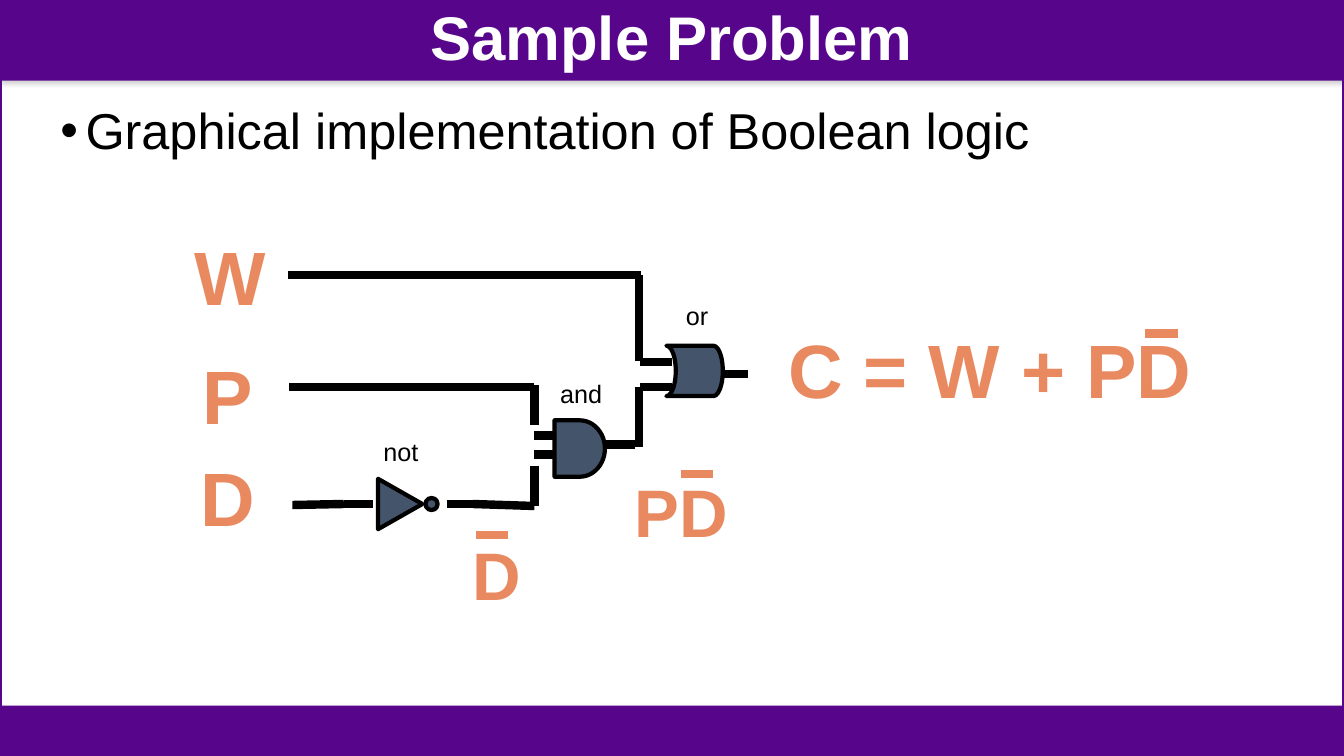
from dataclasses import dataclass
from typing import NamedTuple

from lxml import etree
from pptx import Presentation
from pptx.dml.color import RGBColor
from pptx.enum.shapes import MSO_CONNECTOR, MSO_SHAPE
from pptx.enum.text import MSO_ANCHOR, MSO_AUTO_SIZE, PP_ALIGN
from pptx.oxml.ns import qn
from pptx.shapes.autoshape import Shape
from pptx.shapes.shapetree import SlideShapes
from pptx.util import Emu, Pt

RECTANGLE = MSO_SHAPE.RECTANGLE
INVERTER = MSO_SHAPE.FLOWCHART_EXTRACT
BUBBLE = MSO_SHAPE.FLOWCHART_CONNECTOR
AND_GATE = MSO_SHAPE.FLOWCHART_DELAY
OR_GATE = MSO_SHAPE.FLOWCHART_STORED_DATA
STRAIGHT = MSO_CONNECTOR.STRAIGHT
CENTER, LEFT = PP_ALIGN.CENTER, PP_ALIGN.LEFT
TOP, MIDDLE = MSO_ANCHOR.TOP, MSO_ANCHOR.MIDDLE
GROW = MSO_AUTO_SIZE.SHAPE_TO_FIT_TEXT

EMU_PER_PX = 9144
SLIDE_WIDTH, SLIDE_HEIGHT = 1333, 750


@dataclass(frozen=True)
class Theme:
    font: str = "Arial"
    purple: str = "57068C"
    white: str = "FFFFFF"
    black: str = "000000"
    slate: str = "44546A"
    orange: str = "E98960"
    shadow: str = "808080"
    title_size: int = 44
    body_size: int = 36
    variable_size: int = 54
    term_size: int = 48
    gate_size: int = 18
    frame_width: float = 2.25
    gate_width: float = 3
    wire_width: float = 6


THEME = Theme()


class Box(NamedTuple):
    left: int
    top: int
    width: int
    height: int


class Wire(NamedTuple):
    x1: int
    y1: int
    x2: int
    y2: int
    color: str = THEME.black


class Gate(NamedTuple):
    preset: MSO_SHAPE
    box: Box
    rotation: int = 0
    flipped: bool = False


class Label(NamedTuple):
    text: str
    box: Box
    size: int
    color: str
    bold: bool = False
    wrap: bool = True
    grow: bool = True
    outlined: bool = False
    align: PP_ALIGN = CENTER
    anchor: MSO_ANCHOR = TOP
    line_spacing: float = 1.0
    bullet: bool = False


def px(length: int) -> Emu:
    return Emu(length * EMU_PER_PX)


def formula(text: str, box: Box, size: int) -> Label:
    return Label(text, box, size, THEME.orange, bold=True, wrap=False, outlined=True)


def gate_name(text: str, left: int, top: int) -> Label:
    return Label(text, Box(left, top, 67, 40), THEME.gate_size, THEME.black)


def overline(left: int, y: int) -> Wire:
    return Wire(left, y, left + 32, y, THEME.orange)


BARS = [Box(0, 0, SLIDE_WIDTH, 80), Box(0, 700, SLIDE_WIDTH, 50)]

WIRES = [
    Wire(286, 273, 636, 273),
    Wire(287, 384, 530, 384),
    Wire(341, 500, 370, 500),
    Wire(443, 500, 472, 500),
    Wire(530, 382, 530, 422),
    Wire(530, 462, 530, 502),
    Wire(530, 432, 549, 432),
    Wire(530, 451, 549, 451),
    Wire(599, 441, 630, 441),
    Wire(634, 273, 634, 358),
    Wire(634, 384, 634, 443),
    Wire(635, 359, 667, 359),
    Wire(635, 384, 667, 384),
    Wire(710, 371, 742, 371),
    Wire(341, 500, 290, 501),
    Wire(530, 502, 469, 500),
]

GATES = [
    Gate(INVERTER, Box(372, 478, 50, 44), rotation=90, flipped=True),
    Gate(BUBBLE, Box(422, 494, 12, 12)),
    Gate(AND_GATE, Box(550, 417, 50, 56)),
    Gate(OR_GATE, Box(661, 343, 56, 50), flipped=True),
]

HEADINGS = [
    Label("Sample Problem", Box(0, 0, SLIDE_WIDTH, 80), THEME.title_size, THEME.white,
          bold=True, grow=False, anchor=MIDDLE, line_spacing=0.9),
    Label("Graphical implementation of Boolean logic", Box(0, 100, SLIDE_WIDTH, 584),
          THEME.body_size, THEME.black, grow=False, align=LEFT, line_spacing=0.9, bullet=True),
]

CIRCUIT_LABELS = [
    formula("W", Box(182, 223, 92, 101), THEME.variable_size),
    formula("P", Box(191, 341, 69, 101), THEME.variable_size),
    formula("D", Box(188, 442, 75, 101), THEME.variable_size),
    formula("PD", Box(619, 462, 114, 91), THEME.term_size),
    formula("C = W + PD", Box(770, 315, 424, 101), THEME.variable_size),
    formula("D", Box(458, 524, 69, 91), THEME.term_size),
    gate_name("not", 364, 428),
    gate_name("or", 658, 293),
    gate_name("and", 543, 370),
]

OVERLINES = [overline(472, 531), overline(1136, 331), overline(675, 470)]


def add_outline(parent: etree.ElementBase, color: str) -> None:
    line = etree.Element(qn("a:ln"), w=str(Pt(1)))
    fill = etree.SubElement(line, qn("a:solidFill"))
    etree.SubElement(fill, qn("a:srgbClr"), val=color)
    parent.insert(0, line)


def add_preset(shapes: SlideShapes, preset: MSO_SHAPE, box: Box) -> Shape:
    shape = shapes.add_shape(preset, *map(px, box))
    shape.shadow.inherit = False
    return shape


def draw_bar(shapes: SlideShapes, box: Box) -> None:
    bar = add_preset(shapes, RECTANGLE, box)
    bar.fill.solid()
    bar.fill.fore_color.rgb = RGBColor.from_string(THEME.purple)
    bar.line.fill.background()
    effects = bar.element.spPr.find(qn("a:effectLst"))
    shadow = etree.SubElement(effects, qn("a:outerShdw"), blurRad=str(Pt(3.1)),
                              dist=str(Pt(1.8)), dir="5400000", rotWithShape="0")
    tint = etree.SubElement(shadow, qn("a:srgbClr"), val=THEME.shadow)
    etree.SubElement(tint, qn("a:alpha"), val="35000")


def draw_frame(shapes: SlideShapes) -> None:
    frame = add_preset(shapes, RECTANGLE, Box(0, 0, SLIDE_WIDTH, SLIDE_HEIGHT))
    frame.fill.background()
    frame.line.color.rgb = RGBColor.from_string(THEME.purple)
    frame.line.width = Pt(THEME.frame_width)


def draw_wire(shapes: SlideShapes, wire: Wire) -> None:
    ends = map(px, (wire.x1, wire.y1, wire.x2, wire.y2))
    connector = shapes.add_connector(STRAIGHT, *ends)
    connector.line.color.rgb = RGBColor.from_string(wire.color)
    connector.line.width = Pt(THEME.wire_width)
    etree.SubElement(connector.element.spPr, qn("a:effectLst"))


def draw_gate(shapes: SlideShapes, gate: Gate) -> None:
    symbol = add_preset(shapes, gate.preset, gate.box)
    symbol.rotation = gate.rotation
    symbol.fill.solid()
    symbol.fill.fore_color.rgb = RGBColor.from_string(THEME.slate)
    symbol.line.color.rgb = RGBColor.from_string(THEME.black)
    symbol.line.width = Pt(THEME.gate_width)
    if gate.flipped:
        symbol.element.spPr.find(qn("a:xfrm")).set("flipH", "1")


def draw_label(shapes: SlideShapes, label: Label) -> None:
    frame = shapes.add_textbox(*map(px, label.box)).text_frame
    frame.text = label.text
    frame.word_wrap = label.wrap
    frame.vertical_anchor = label.anchor
    if label.grow:
        frame.auto_size = GROW
    paragraph = frame.paragraphs[0]
    paragraph.alignment = label.align
    paragraph.line_spacing = label.line_spacing
    if label.bullet:
        properties = paragraph._p.get_or_add_pPr()
        properties.set("marL", str(px(75)))
        properties.set("indent", str(px(-25)))
        etree.SubElement(properties, qn("a:buFont"), typeface=THEME.font)
        etree.SubElement(properties, qn("a:buChar"), char="•")
    run = paragraph.runs[0]
    run.font.name = THEME.font
    run.font.size = Pt(label.size)
    run.font.bold = label.bold
    run.font.color.rgb = RGBColor.from_string(label.color)
    if label.outlined:
        add_outline(run.font._element, label.color) if hasattr(run.font, "_element") else add_outline(
            run._r.get_or_add_rPr(), label.color)


def main() -> None:
    presentation = Presentation()
    presentation.slide_width, presentation.slide_height = px(SLIDE_WIDTH), px(SLIDE_HEIGHT)
    shapes = presentation.slides.add_slide(presentation.slide_layouts[6]).shapes
    top_bar, bottom_bar = BARS
    draw_bar(shapes, top_bar)
    draw_frame(shapes)
    draw_bar(shapes, bottom_bar)
    for heading in HEADINGS:
        draw_label(shapes, heading)
    for wire in WIRES:
        draw_wire(shapes, wire)
    for gate in GATES:
        draw_gate(shapes, gate)
    for label in CIRCUIT_LABELS:
        draw_label(shapes, label)
    for line in OVERLINES:
        draw_wire(shapes, line)
    presentation.save("out.pptx")


if __name__ == "__main__":
    main()
